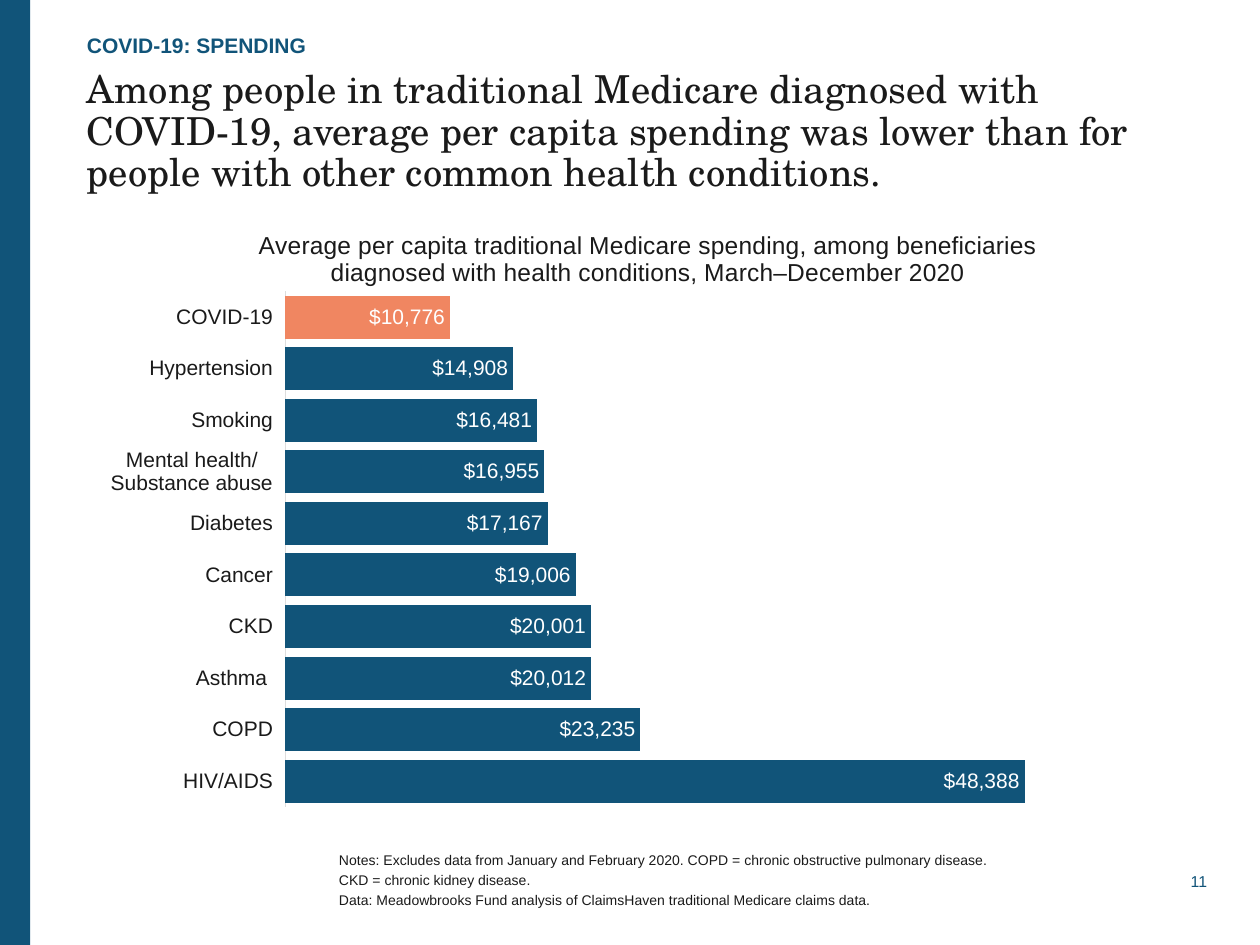
from typing import NamedTuple

from lxml import etree
from pptx import Presentation
from pptx.chart.data import CategoryChartData
from pptx.dml.color import RGBColor
from pptx.enum.chart import XL_CHART_TYPE, XL_LABEL_POSITION, XL_TICK_LABEL_POSITION, XL_TICK_MARK
from pptx.enum.shapes import MSO_SHAPE
from pptx.enum.text import MSO_ANCHOR, PP_ALIGN
from pptx.oxml.ns import qn
from pptx.util import Inches, Pt

BAR_CLUSTERED = XL_CHART_TYPE.BAR_CLUSTERED
INSIDE_END = XL_LABEL_POSITION.INSIDE_END
LABELS_LOW = XL_TICK_LABEL_POSITION.LOW
NO_TICKS = XL_TICK_MARK.NONE
RECTANGLE = MSO_SHAPE.RECTANGLE
TOP, MIDDLE, BOTTOM = MSO_ANCHOR.TOP, MSO_ANCHOR.MIDDLE, MSO_ANCHOR.BOTTOM
LEFT, RIGHT = PP_ALIGN.LEFT, PP_ALIGN.RIGHT

BLUE = RGBColor(0x11, 0x54, 0x79)
ORANGE = RGBColor(0xF0, 0x86, 0x61)
INK = RGBColor(0x1A, 0x1A, 0x1A)
WHITE = RGBColor(0xFF, 0xFF, 0xFF)
AXIS_GREY = RGBColor(0xDD, 0xDD, 0xDD)

SANS = "Arial"
SERIF = "TeX Gyre Schola"
DOLLARS = '"$"#,##0'
HIGHLIGHTED = "COVID-19"
CHART_TITLE = (
    "Average per capita traditional Medicare spending, among beneficiaries "
    "diagnosed with health conditions, March–December 2020"
)


class Block(NamedTuple):
    text: str
    left: float
    top: float
    width: float
    height: float
    size: float
    color: RGBColor = INK
    font: str = SANS
    bold: bool = False
    anchor: MSO_ANCHOR = MIDDLE
    align: PP_ALIGN = LEFT
    line_spacing: float = 1.0
    paragraph_gap: float = 0
    wrap: bool = True


class Spending(NamedTuple):
    condition: str
    dollars: int


BLOCKS = [
    Block("COVID-19: SPENDING", 0.69, 0.19, 8.66, 0.27, 12, BLUE, bold=True, anchor=BOTTOM),
    Block(
        "Among people in traditional Medicare diagnosed with COVID-19, average per capita "
        "spending was lower than for people with other common health conditions.",
        0.69, 0.56, 8.85, 0.8, 22, font=SERIF, anchor=TOP, line_spacing=0.9,
    ),
    Block(
        "Notes: Excludes data from January and February 2020. "
        "COPD = chronic obstructive pulmonary disease.\n"
        "CKD = chronic kidney disease.\n"
        "Data: Meadowbrooks Fund analysis of ClaimsHaven traditional Medicare claims data.",
        2.69, 6.56, 6.59, 0.85, 8, paragraph_gap=1.9,
    ),
    Block("11", 9.27, 6.88, 0.31, 0.22, 9, BLUE, align=RIGHT, wrap=False),
]

SPENDING = [
    Spending("HIV/AIDS", 48388),
    Spending("COPD", 23235),
    Spending("Asthma ", 20012),
    Spending("CKD", 20001),
    Spending("Cancer", 19006),
    Spending("Diabetes", 17167),
    Spending("Mental health/\nSubstance abuse", 16955),
    Spending("Smoking", 16481),
    Spending("Hypertension", 14908),
    Spending(HIGHLIGHTED, 10776),
]


def style_font(font, size: float, color: RGBColor, name: str = SANS, bold: bool = False) -> None:
    font.size = Pt(size)
    font.color.rgb = color
    font.name = name
    font.bold = bold


def add_side_band(slide) -> None:
    band = slide.shapes.add_shape(RECTANGLE, 0, 0, Inches(0.24), Inches(7.5))
    band.shadow.inherit = False
    band.fill.solid()
    band.fill.fore_color.rgb = BLUE
    band.line.fill.background()


def add_block(slide, block: Block) -> None:
    box = slide.shapes.add_textbox(
        Inches(block.left), Inches(block.top), Inches(block.width), Inches(block.height)
    )
    frame = box.text_frame
    frame.margin_left = frame.margin_top = frame.margin_right = frame.margin_bottom = 0
    frame.word_wrap = block.wrap
    frame.vertical_anchor = block.anchor
    frame.text = block.text
    for index, paragraph in enumerate(frame.paragraphs):
        paragraph.alignment = block.align
        paragraph.line_spacing = block.line_spacing
        if index:
            paragraph.space_before = Pt(block.paragraph_gap)
        for run in paragraph.runs:
            style_font(run.font, block.size, block.color, block.font, block.bold)


def set_layout(parent, following: str, **settings) -> None:
    """Place a chart part by fractions of the chart, before the named sibling."""
    for old in parent.findall(qn("c:layout")):
        parent.remove(old)
    layout = etree.Element(qn("c:layout"))
    manual = etree.SubElement(layout, qn("c:manualLayout"))
    for tag, value in settings.items():
        etree.SubElement(manual, qn(f"c:{tag}")).set("val", str(value))
    parent.find(qn(following)).addprevious(layout)


def add_spending_chart(slide) -> None:
    data = CategoryChartData(number_format=DOLLARS)
    data.categories = [row.condition for row in SPENDING]
    data.add_series("Series 1", [row.dollars for row in SPENDING])
    chart = slide.shapes.add_chart(
        BAR_CLUSTERED, Inches(0.69), Inches(1.59), Inches(8.85), Inches(4.82), data
    ).chart
    chart.has_legend = False
    style_font(chart.font, 10, INK)

    chart.has_title = True
    title = chart.chart_title
    title.text_frame.text = CHART_TITLE
    style_font(title.text_frame.paragraphs[0].runs[0].font, 14, INK)
    title.include_in_layout = False
    set_layout(title._element, "c:overlay", xMode="edge", yMode="edge", x=0.15, y=0.04)
    set_layout(
        chart._chartSpace.chart.plotArea, "c:barChart",
        layoutTarget="inner", xMode="edge", yMode="edge", x=0.178, y=0.15, w=0.822, h=0.85,
    )

    conditions = chart.category_axis
    conditions.major_tick_mark = conditions.minor_tick_mark = NO_TICKS
    conditions.tick_label_position = LABELS_LOW
    conditions.format.line.color.rgb = AXIS_GREY
    conditions.format.line.width = Pt(0.75)
    style_font(conditions.tick_labels.font, 12, INK)

    dollars = chart.value_axis
    dollars.minimum_scale, dollars.maximum_scale = 0, 60000
    dollars.has_major_gridlines = False
    dollars.visible = False

    plot = chart.plots[0]
    plot.gap_width = 20
    plot.vary_by_categories = False
    bars = plot.series[0]
    bars.format.fill.solid()
    bars.format.fill.fore_color.rgb = BLUE
    highlight = [row.condition for row in SPENDING].index(HIGHLIGHTED)
    highlight_fill = bars.points[highlight].format.fill
    highlight_fill.solid()
    highlight_fill.fore_color.rgb = ORANGE

    labels = bars.data_labels
    labels.show_value = True
    labels.position = INSIDE_END
    labels.number_format = DOLLARS
    labels.number_format_is_linked = False
    style_font(labels.font, 12, WHITE)


def main() -> None:
    deck = Presentation()
    deck.slide_width, deck.slide_height = Inches(10), Inches(7.5)
    slide = deck.slides.add_slide(deck.slide_layouts[6])
    add_side_band(slide)
    for block in BLOCKS:
        add_block(slide, block)
    add_spending_chart(slide)
    deck.save("out.pptx")


if __name__ == "__main__":
    main()
